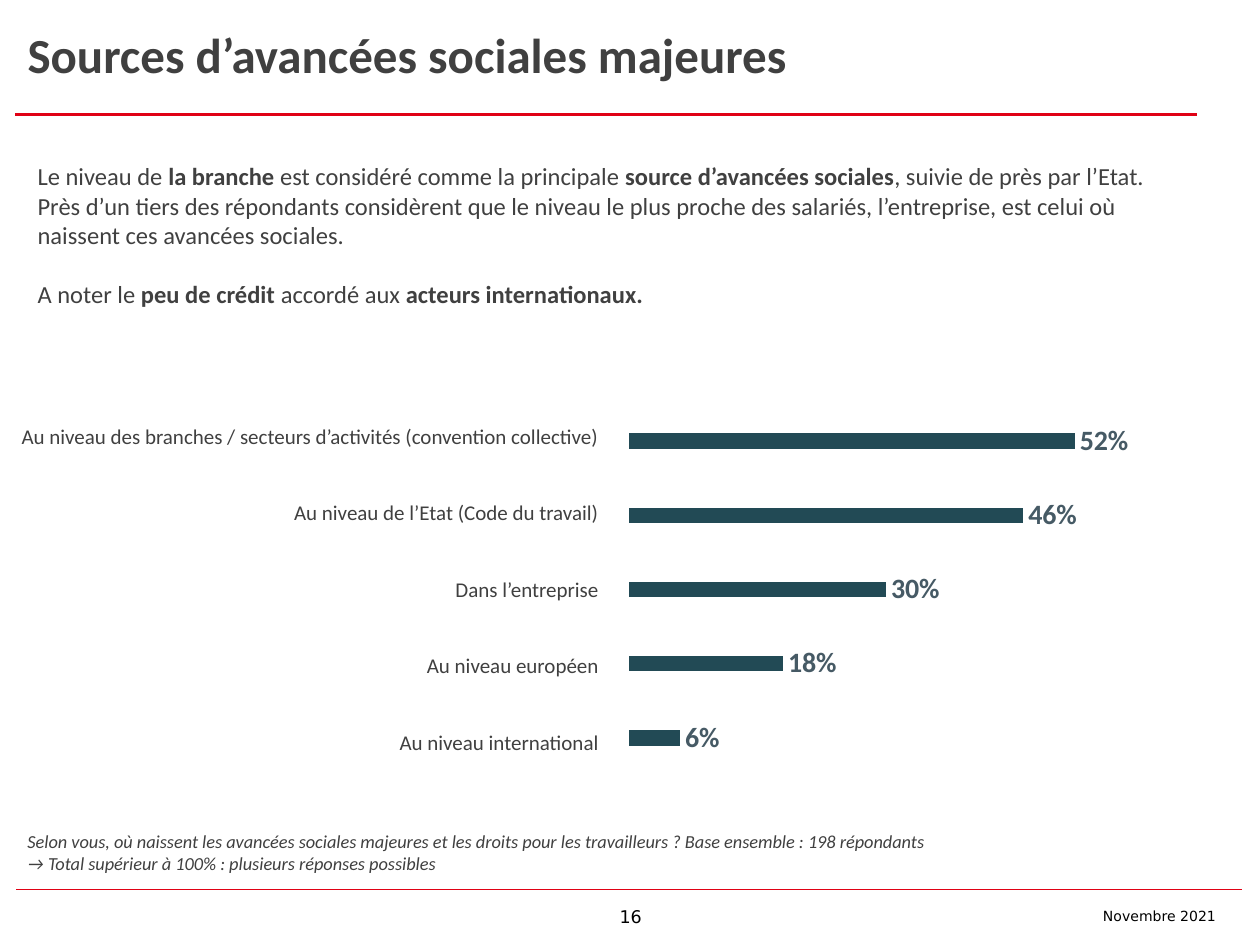
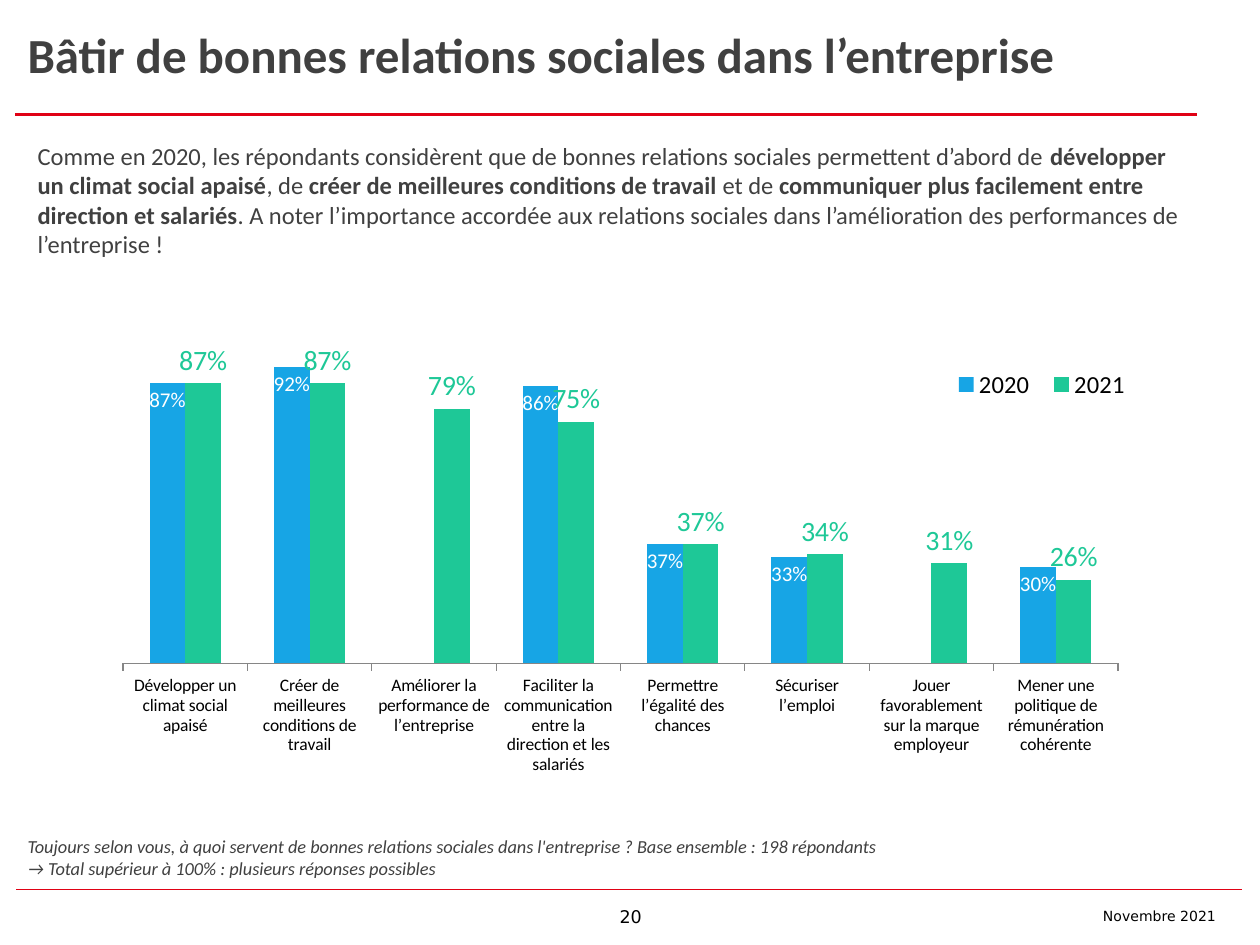
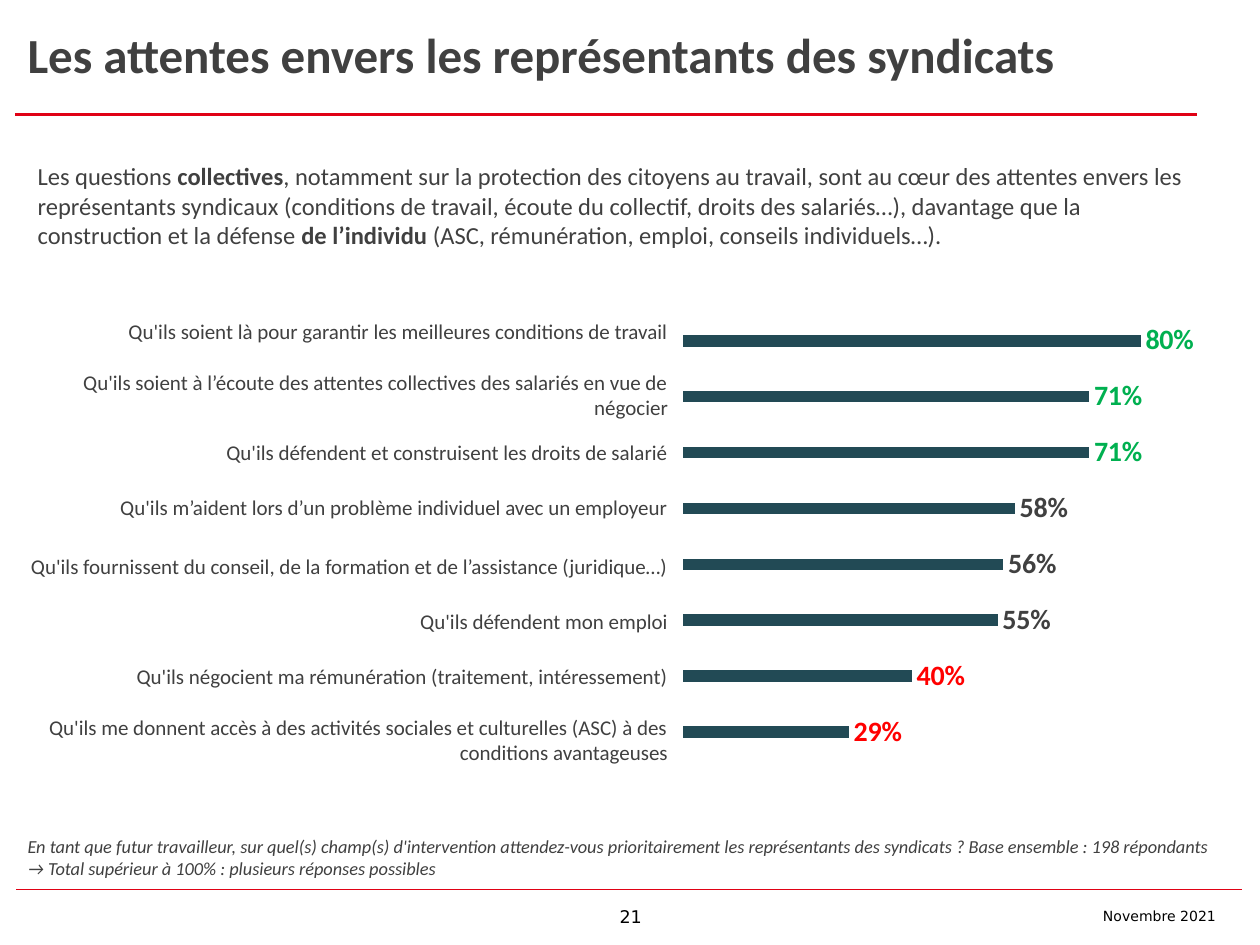
"""Builds three survey slides: a shared frame, a comment, and one chart each."""
from lxml import etree
from pptx import Presentation
from pptx.chart.data import CategoryChartData
from pptx.dml.color import RGBColor
from pptx.enum.chart import (XL_CHART_TYPE, XL_LABEL_POSITION, XL_LEGEND_POSITION,
                             XL_TICK_MARK)
from pptx.enum.shapes import MSO_CONNECTOR
from pptx.enum.text import MSO_ANCHOR, PP_ALIGN
from pptx.oxml.ns import qn
from pptx.util import Inches, Pt

BARS, COLUMNS = XL_CHART_TYPE.BAR_CLUSTERED, XL_CHART_TYPE.COLUMN_CLUSTERED
LEFT, CENTER, RIGHT = PP_ALIGN.LEFT, PP_ALIGN.CENTER, PP_ALIGN.RIGHT
TOP, MIDDLE = MSO_ANCHOR.TOP, MSO_ANCHOR.MIDDLE
INSIDE, OUTSIDE = XL_LABEL_POSITION.INSIDE_END, XL_LABEL_POSITION.OUTSIDE_END

BODY_FONT, FOOTER_FONT = "Calibri", "DejaVu Sans"
INK, BLACK, WHITE, RULE = "404040", "000000", "FFFFFF", "E00115"
TEAL, SLATE, GREEN, RED = "224A55", "465A65", "00B050", "FF0000"
BLUE, MINT, AXIS = "17A5E5", "1EC897", "868686"
EMPTY_SERIES = {"Series 2": "C0504D", "Series 3": "9BBB59"}

DATE = "Novembre 2021"
MULTIPLE = "→ Total supérieur à 100% : plusieurs réponses possibles"
RULES = [(0.12, 9.5, 0.91, 2), (0.13, 9.86, 7.06, 0.5)]

SOURCES = {
    "title": "Sources d’avancées sociales majeures",
    "page": 16,
    "comment": [
        "Le niveau de **la branche **est considéré comme la principale **source d’avancées "
        "sociales**, suivie de près par l’Etat. Près d’un tiers des répondants considèrent "
        "que le niveau le plus proche des salariés, l’entreprise, est celui où naissent ces "
        "avancées sociales.",
        "A noter le **peu de crédit **accordé aux **acteurs internationaux.**"],
    "comment_box": (0.2, 1.23, 9.29, 1.28),
    "question": "Selon vous, où naissent les avancées sociales majeures et les droits pour "
                "les travailleurs ? Base ensemble : 198 répondants",
    "question_box": (0.12, 6.54, 8.66, 0.45),
    "chart_box": (0.28, 2.91, 9.29, 3.12),
    "plot": (0.507, 0.056, 0.44, 0.944),
    "top": 0.6,
    "labels_box": (0.05, 3.31, 4.8, 2.73),
    "answers": [
        ("Au niveau des branches / secteurs d’activités (convention collective)", 0, 0.52, SLATE),
        ("Au niveau de l’Etat (Code du travail)", 29.3, 0.46, SLATE),
        ("Dans l’entreprise", 29.3, 0.3, SLATE),
        ("Au niveau européen", 29.3, 0.18, SLATE),
        ("Au niveau international", 29.3, 0.06, SLATE)],
}

RELATIONS = {
    "title": "Bâtir de bonnes relations sociales dans l’entreprise",
    "page": 20,
    "comment": [
        "Comme en 2020, les répondants considèrent que de bonnes relations sociales permettent "
        "d’abord de **développer un climat social apaisé**, de **créer de meilleures conditions "
        "de travail **et de **communiquer plus facilement entre direction et salariés**. A noter "
        "l’importance accordée aux relations sociales dans l’amélioration des performances de "
        "l’entreprise !"],
    "comment_box": (0.2, 1.07, 9.29, 1.04),
    "question": "Toujours selon vous, à quoi servent de bonnes relations sociales dans "
                "l'entreprise ? Base ensemble : 198 répondants",
    "question_box": (0.12, 6.58, 9.88, 0.45),
    "chart_box": (0.28, 2.12, 9.29, 4.19),
    "plot": (0.075, 0.14, 0.85, 0.611),
    "legend": (0.775, 0.185, 0.17, 0.075),
    "top": 1,
    "years": [("2020", BLUE, 12, WHITE, INSIDE), ("2021", MINT, 16, MINT, OUTSIDE)],
    "goals": [
        ("Développer un climat social apaisé", 0.87, 0.87),
        ("Créer de meilleures conditions de travail", 0.92, 0.87),
        ("Améliorer la performance de l’entreprise", None, 0.79),
        ("Faciliter la communication entre la direction et les salariés", 0.86, 0.75),
        ("Permettre l’égalité des chances", 0.37, 0.37),
        ("Sécuriser l’emploi", 0.33, 0.34),
        ("Jouer favorablement sur la marque employeur", None, 0.31),
        ("Mener une politique de rémunération cohérente", 0.3, 0.26)],
}

EXPECTATIONS = {
    "title": "Les attentes envers les représentants des syndicats",
    "page": 21,
    "comment": [
        "Les questions **collectives**, notamment sur la protection des citoyens au travail, "
        "sont au cœur des attentes envers les représentants syndicaux (conditions de travail, "
        "écoute du collectif, droits des salariés…), davantage que la construction et la "
        "défense **de l’individu** (ASC, rémunération, emploi, conseils individuels…)."],
    "comment_box": (0.2, 1.23, 9.29, 0.81),
    "question": "En tant que futur travailleur, sur quel(s) champ(s) d'intervention "
                "attendez-vous prioritairement les représentants des syndicats ? "
                "Base ensemble : 198 répondants",
    "question_box": (0.12, 6.58, 9.88, 0.45),
    "chart_box": (0.71, 2.17, 9.29, 4.09),
    "plot": (0.507, 0.054, 0.44, 0.868),
    "top": 0.9,
    "labels_box": (0.07, 2.48, 5.33, 3.65),
    "answers": [
        ("Qu'ils soient là pour garantir les meilleures conditions de travail", 0, 0.8, GREEN),
        ("Qu'ils soient à l’écoute des attentes collectives des salariés en vue de négocier",
         14.6, 0.71, GREEN),
        ("Qu'ils défendent et construisent les droits de salarié", 11, 0.71, GREEN),
        ("Qu'ils m’aident lors d’un problème individuel avec un employeur", 17.1, 0.58, INK),
        ("Qu'ils fournissent du conseil, de la formation et de l’assistance (juridique…)",
         19.5, 0.56, INK),
        ("Qu'ils défendent mon emploi", 17.1, 0.55, INK),
        ("Qu'ils négocient ma rémunération (traitement, intéressement)", 17.1, 0.4, RED),
        ("Qu'ils me donnent accès à des activités sociales et culturelles (ASC) à des "
         "conditions avantageuses", 14.6, 0.29, RED)],
}


def rgb(code):
    return RGBColor.from_string(code)


def style(font, size, color, name=BODY_FONT, bold=False, italic=False):
    font.size, font.name, font.bold, font.italic = Pt(size), name, bold, italic
    font.color.rgb = rgb(color)


def add_text(slide, box, lines, size, color=INK, name=BODY_FONT, bold=False, italic=False,
             align=LEFT, anchor=TOP, gaps=None):
    """Write lines in a box; ** switches bold, gaps are points before each line."""
    frame = slide.shapes.add_textbox(*map(Inches, box)).text_frame
    frame.word_wrap, frame.vertical_anchor = True, anchor
    for index, line in enumerate(lines):
        paragraph = frame.paragraphs[0] if index == 0 else frame.add_paragraph()
        paragraph.alignment = align
        if gaps and index:
            paragraph.space_before = Pt(gaps[index])
        for part, words in enumerate(line.split("**")):
            if words:
                run = paragraph.add_run()
                run.text = words
                style(run.font, size, color, name, bold or part % 2 == 1, italic)


def add_frame(slide, content):
    """Draw what every slide shares: title, rules, comment, question and footer."""
    for start, end, y, width in RULES:
        rule = slide.shapes.add_connector(MSO_CONNECTOR.STRAIGHT, Inches(start), Inches(y),
                                          Inches(end), Inches(y))
        rule.line.color.rgb, rule.line.width = rgb(RULE), Pt(width)
        etree.SubElement(rule._element.spPr, qn("a:effectLst"))
    add_text(slide, (0.12, 0.05, 9.41, 0.76), [content["title"]], 28, bold=True, anchor=MIDDLE)
    add_text(slide, content["comment_box"], content["comment"], 14, gaps=(0, 17))
    add_text(slide, content["question_box"], [content["question"], MULTIPLE], 10.5, italic=True)
    add_text(slide, (4.69, 7.14, 0.63, 0.27), [str(content["page"])], 10, BLACK, FOOTER_FONT,
             align=CENTER)
    add_text(slide, (7.07, 7.15, 2.68, 0.24), [DATE], 8, BLACK, FOOTER_FONT, align=RIGHT)


def place(parent, shares, after, inner=False):
    """Fix a plot area or legend at shares of the chart's size."""
    for old in parent.findall(qn("c:layout")):
        parent.remove(old)
    layout = etree.Element(qn("c:layout"))
    manual = etree.SubElement(layout, qn("c:manualLayout"))
    settings = [("layoutTarget", "inner")] if inner else []
    settings += [("xMode", "edge"), ("yMode", "edge"), *zip("xywh", shares)]
    for tag, value in settings:
        etree.SubElement(manual, qn("c:" + tag)).set("val", str(value))
    parent.insert(after, layout)


def add_survey_chart(slide, content, kind, categories, series, gap):
    """Add a chart of (name, values, colour) series with a hidden percent axis."""
    data = CategoryChartData(number_format="0%")
    data.categories = categories
    for name, values, _ in series:
        data.add_series(name, values)
    chart = slide.shapes.add_chart(kind, *map(Inches, content["chart_box"]), data).chart
    style(chart.font, 10, BLACK)
    chart.has_title = chart.has_legend = False
    chart.value_axis.has_major_gridlines = chart.value_axis.visible = False
    chart.value_axis.minimum_scale, chart.value_axis.maximum_scale = 0, content["top"]
    plot = chart.plots[0]
    plot.gap_width, plot.vary_by_categories = gap, False
    for drawn, (_, _, color) in zip(plot.series, series):
        drawn.format.fill.solid()
        drawn.format.fill.fore_color.rgb = rgb(color)
    place(chart._chartSpace.chart.plotArea, content["plot"], 0, inner=True)
    return chart


def show_values(series, size, color, bold=False, position=OUTSIDE):
    labels = series.data_labels
    labels.show_value, labels.position = True, position
    labels.number_format, labels.number_format_is_linked = "0%", False
    style(labels.font, size, color, bold=bold)


def add_answers(slide, content):
    """Horizontal bars, with the answers written beside them."""
    answers, gaps, shares, colors = zip(*content["answers"])
    count = len(answers)
    series = [("Series 1", shares[::-1], TEAL)]
    series += [(name, [None] * count, color) for name, color in EMPTY_SERIES.items()]
    chart = add_survey_chart(slide, content, BARS, [str(n + 1) for n in range(count)],
                             series, 182)
    chart.category_axis.visible = False
    bars = chart.plots[0].series[0]
    base = SLATE if SLATE in colors else INK
    show_values(bars, 16, base, bold=True)
    for index, color in enumerate(colors[::-1]):
        if color != base:
            label = bars.points[index].data_label
            style(label.font, 16, color, bold=True)
            label.position = OUTSIDE
    add_text(slide, content["labels_box"], answers, 12, align=RIGHT, gaps=gaps)


def add_goals(slide, content):
    """Columns that compare the two years."""
    goals, *results = zip(*content["goals"])
    series = [(year[0], values, year[1]) for year, values in zip(content["years"], results)]
    chart = add_survey_chart(slide, content, COLUMNS, goals, series, 150)
    axis = chart.category_axis
    axis.major_tick_mark = XL_TICK_MARK.OUTSIDE
    axis.format.line.color.rgb = rgb(AXIS)
    style(axis.tick_labels.font, 10, BLACK)
    for drawn, (_, _, size, color, position) in zip(chart.plots[0].series, content["years"]):
        show_values(drawn, size, color, position=position)
    chart.has_legend = True
    legend = chart.legend
    legend.position, legend.include_in_layout = XL_LEGEND_POSITION.RIGHT, False
    style(legend.font, 14, BLACK)
    place(legend._element, content["legend"], 1)


def main():
    deck = Presentation()
    deck.slide_width, deck.slide_height = Inches(10), Inches(7.5)
    for content, add_results in [(SOURCES, add_answers), (RELATIONS, add_goals),
                                 (EXPECTATIONS, add_answers)]:
        slide = deck.slides.add_slide(deck.slide_layouts[6])
        add_frame(slide, content)
        add_results(slide, content)
    deck.save("out.pptx")


if __name__ == "__main__":
    main()
